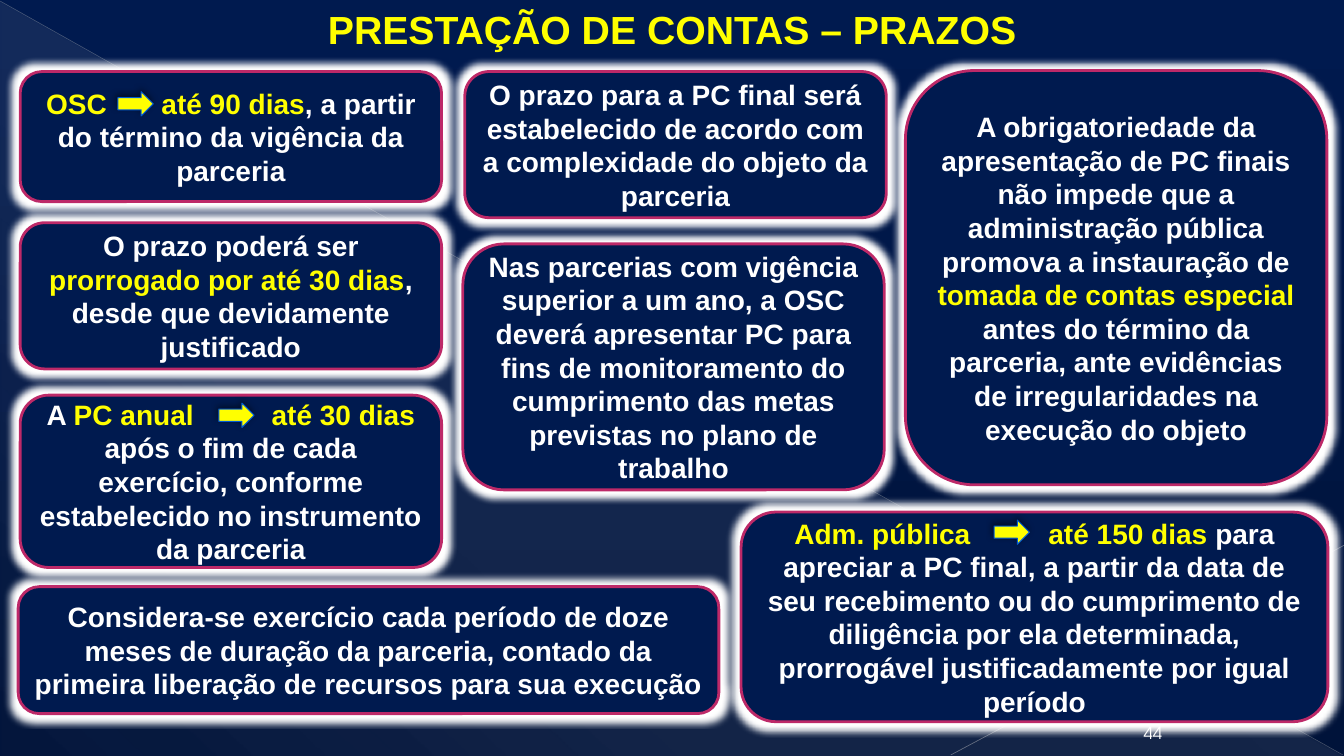
from dataclasses import dataclass
from lxml.etree import SubElement
from pptx import Presentation
from pptx.dml.color import RGBColor
from pptx.enum.shapes import MSO_CONNECTOR, MSO_SHAPE
from pptx.enum.text import MSO_ANCHOR, PP_ALIGN
from pptx.oxml import parse_xml
from pptx.oxml.ns import nsdecls, qn
from pptx.util import Inches, Pt


@dataclass(frozen=True)
class Theme:
    """Colours, fonts and type sizes of the slide."""
    navy: str = "001A4F"
    deep: str = "00133A"
    pink: str = "BD2968"
    yellow: str = "FFFF00"
    white: str = "FFFFFF"
    blue: str = "005BD3"
    haze: str = "D2D2D2"
    font: str = "Arial"
    number_font: str = "TeX Gyre Adventor"
    title: int = 28
    body: int = 20
    number: int = 12


T = Theme()
W, H = 13.33, 7.5
COL = 4.18
TITLE = "PRESTAÇÃO DE CONTAS – PRAZOS"
NUMBER = "44"
GAP = {"short": 33.4, "long": 50}
CARDS = [
    ((0.2, 0.71, COL, 1.29), 6, ["*OSC", GAP["short"], "*até 90 dias",
     ", a partir do término da vigência da parceria"]),
    ((4.61, 0.71, COL, 1.45), 6, ["O prazo para a PC final será estabelecido de acordo "
     "com a complexidade do objeto da parceria"]),
    ((8.98, 0.7, COL, 4.11), 6, ["A obrigatoriedade da apresentação de PC finais não impede "
     "que a administração pública promova a instauração de ", "*tomada de contas especial",
     " antes do término da parceria, ante evidências de irregularidades na execução do objeto"]),
    ((0.2, 2.21, COL, 1.45), 6, ["O prazo poderá ser ", "*prorrogado por até 30 dias",
     ", desde que devidamente justificado"]),
    ((4.59, 2.42, COL, 2.44), 6, ["Nas parcerias com vigência superior a um ano, a OSC deverá "
     "apresentar PC para fins de monitoramento do cumprimento das metas previstas no plano "
     "de trabalho"]),
    ((0.2, 3.92, COL, 1.71), 6, ["A ", "*PC anual", GAP["long"], "*até 30 dias ",
     "após o fim de cada exercício, conforme estabelecido no instrumento da parceria"]),
    ((0.18, 5.82, 6.95, 1.26), 12, ["Considera-se exercício cada período de doze meses de "
     "duração da parceria, contado da primeira liberação de recursos para sua execução"]),
    ((7.35, 5.08, 5.82, 2.08), 12, ["*Adm. pública", GAP["long"], "*até 150 dias",
     " para apreciar a PC final, a partir da data de seu recebimento ou do cumprimento de "
     "diligência por ela determinada, prorrogável justificadamente por igual período"]),
]
ARROWS = [(1.17, 0.91), (2.17, 4), (9.86, 5.16)]
RAYS = [((0, 0.01), (13.32, 7.49), "BFBFBF", 0.39, 35),
        ((13.33, 5.41), (9.43, 7.49), "C6C6C6", 0.47, 45)]


def rgb(code):
    return RGBColor.from_string(code)


def box(*lengths):
    return [Inches(v) for v in lengths]


def gradient(stops, angle):
    gs = "".join(f'<a:gs pos="{pos * 1000}"><a:srgbClr val="{code}">'
                 f'<a:alpha val="{alpha * 1000}"/></a:srgbClr></a:gs>'
                 for pos, code, alpha in stops)
    return parse_xml(f'<a:gradFill {nsdecls("a")} rotWithShape="1"><a:gsLst>{gs}</a:gsLst>'
                     f'<a:lin ang="{angle * 60000}" scaled="0"/></a:gradFill>')


def effects(shape, inner=""):
    pr = shape._element.spPr
    for old in pr.findall(qn("a:effectLst")):
        pr.remove(old)
    pr.append(parse_xml(f'<a:effectLst {nsdecls("a")}>{inner}</a:effectLst>'))


def style(p, size, color, font=T.font, bold=False):
    p.alignment = PP_ALIGN.CENTER
    p.font.size, p.font.name, p.font.bold = Pt(size), font, bold
    p.font.color.rgb = rgb(color)


def solid(s, kind, place, fill, line, width):
    sp = s.shapes.add_shape(kind, *box(*place))
    sp.shadow.inherit = False
    sp.fill.solid()
    sp.fill.fore_color.rgb = rgb(fill)
    sp.line.color.rgb = rgb(line)
    sp.line.width = Pt(width)
    return sp


def add_backdrop(s):
    s.background.fill.solid()
    pr = s._element.cSld.bg.bgPr
    pr.replace(pr[0], gradient([(0, T.navy, 100), (100, T.deep, 100)], 90))
    tri = s.shapes.add_shape(MSO_SHAPE.RIGHT_TRIANGLE, *box(0.01, 0.02, 13.31, 7.48))
    tri.line.fill.background()
    tri._element.spPr.insert(2, gradient([(0, T.haze, 10), (70, T.haze, 8),
                                          (100, T.haze, 1)], 133))
    effects(tri)
    for start, end, color, width, alpha in RAYS:
        ray = s.shapes.add_connector(MSO_CONNECTOR.STRAIGHT, *box(*start, *end))
        ray.line.color.rgb = rgb(color)
        ray.line.width = Pt(width)
        clr = ray._element.spPr.find(".//" + qn("a:srgbClr"))
        SubElement(clr, qn("a:alpha"), val=str(alpha * 1000))
        effects(ray)


def add_title(s):
    title = s.shapes.title
    s.shapes._spTree.append(title._element)
    title.left, title.top, title.width, title.height = box(0.25, 0, 12.83, 0.57)
    tf = title.text_frame
    tf.vertical_anchor = MSO_ANCHOR.MIDDLE
    tf.text = TITLE
    style(tf.paragraphs[0], T.title, T.yellow, bold=True)


def add_number(s):
    tf = s.shapes.add_textbox(*box(11.07, 7.09, 0.73, 0.33)).text_frame
    tf.word_wrap = True
    tf.vertical_anchor = MSO_ANCHOR.BOTTOM
    tf.text = NUMBER
    style(tf.paragraphs[0], T.number, T.white, T.number_font)


def add_card(s, place, after, parts):
    sp = solid(s, MSO_SHAPE.ROUNDED_RECTANGLE, place, T.navy, T.pink, 2)
    effects(sp, f'<a:glow rad="{Pt(10)}"><a:srgbClr val="{T.white}"/></a:glow>')
    tf = sp.text_frame
    tf.word_wrap = True
    tf.vertical_anchor = MSO_ANCHOR.MIDDLE
    p = tf.paragraphs[0]
    style(p, T.body, T.white, bold=True)
    p.space_after = Pt(after)
    for part in parts:
        r = p.add_run()
        if isinstance(part, str):
            r.text = part.removeprefix("*")
            if part.startswith("*"):
                r.font.color.rgb = rgb(T.yellow)
        else:
            r.text = " "
            r._r.get_or_add_rPr().set("spc", str(round(part * 100)))


def add_arrow(s, x, y):
    sp = solid(s, MSO_SHAPE.RIGHT_ARROW, (x, y, 0.35, 0.24), T.yellow, T.blue, 0.75)
    effects(sp, f'<a:outerShdw blurRad="{Pt(5)}" dist="{Pt(2)}" dir="{245 * 60000}">'
                '<a:srgbClr val="000000"><a:alpha val="50000"/></a:srgbClr></a:outerShdw>')


def main():
    prs = Presentation()
    prs.slide_width, prs.slide_height = box(W, H)
    s = prs.slides.add_slide(prs.slide_layouts[5])
    add_backdrop(s)
    add_title(s)
    add_number(s)
    for card in CARDS:
        add_card(s, *card)
    for arrow in ARROWS:
        add_arrow(s, *arrow)
    prs.save("out.pptx")


if __name__ == "__main__":
    main()
